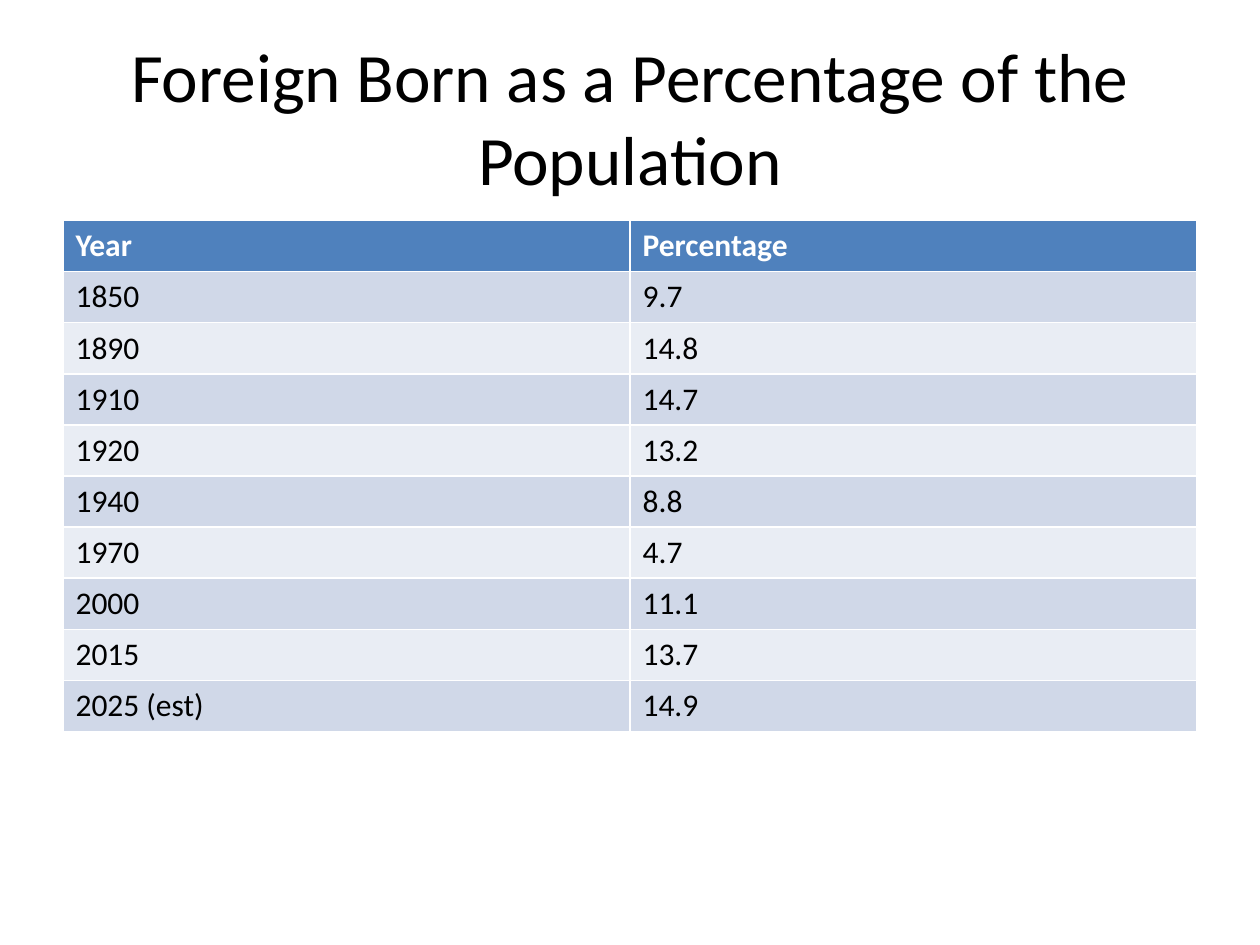
from pptx import Presentation
from pptx.dml.color import RGBColor
from pptx.enum.text import MSO_ANCHOR, MSO_AUTO_SIZE, PP_ALIGN
from pptx.util import Inches, Pt

MIDDLE = MSO_ANCHOR.MIDDLE
NO_FIT = MSO_AUTO_SIZE.NONE
CENTER = PP_ALIGN.CENTER

WIDTH, HEIGHT = Inches(10), Inches(7.5)
TITLE_BOX = (0.05, 0.04, 0.9, 1 / 6)
TABLE_BOX = (0.05, 7 / 30, 0.9, 0.54)
COLORS = {
    "header": "4F81BD",
    "odd": "D0D8E8",
    "even": "E9EDF4",
    "light": "FFFFFF",
    "dark": "000000",
}
TITLE_FONT = {"name": "Calibri", "size": Pt(39.6), "bold": False}
HEADER_FONT = {"name": "Calibri", "size": Pt(18), "bold": True}
BODY_FONT = {**HEADER_FONT, "bold": False}

TITLE = "Foreign Born as a Percentage of the Population"
ROWS = [
    ("Year", "Percentage"),
    ("1850", "9.7"),
    ("1890", "14.8"),
    ("1910", "14.7"),
    ("1920", "13.2"),
    ("1940", "8.8"),
    ("1970", "4.7"),
    ("2000", "11.1"),
    ("2015", "13.7"),
    ("2025 (est)", "14.9"),
]


def place(box):
    """Turn shares of the slide into left, top, width and height."""
    return [round(share * side) for share, side in zip(box, (WIDTH, HEIGHT) * 2)]


def set_all(target, values):
    """Set each named attribute on the target."""
    for name, value in values.items():
        setattr(target, name, value)


def write(para, text, font, color):
    """Add one formatted span to a paragraph."""
    span = para.add_run()
    span.text = text
    set_all(span.font, font)
    span.font.color.rgb = RGBColor.from_string(COLORS[color])


def add_title(page, box):
    """Fill the title placeholder inside the box."""
    title = page.shapes.title
    set_all(title, dict(zip(("left", "top", "width", "height"), place(box))))
    frame = title.text_frame
    set_all(frame, {"word_wrap": True, "auto_size": NO_FIT, "vertical_anchor": MIDDLE})
    para = frame.paragraphs[0]
    para.alignment = CENTER
    write(para, TITLE, TITLE_FONT, "dark")


def add_percentages(page, box):
    """Build the banded table of years and percentages inside the box."""
    table = page.shapes.add_table(len(ROWS), len(ROWS[0]), *place(box)).table
    for row, values in enumerate(ROWS):
        fill = ("odd" if row % 2 else "even") if row else "header"
        font, color = (BODY_FONT, "dark") if row else (HEADER_FONT, "light")
        for column, text in enumerate(values):
            cell = table.cell(row, column)
            cell.fill.solid()
            cell.fill.fore_color.rgb = RGBColor.from_string(COLORS[fill])
            write(cell.text_frame.paragraphs[0], text, font, color)


def main():
    """Create the deck and save it."""
    deck = Presentation()
    set_all(deck, {"slide_width": WIDTH, "slide_height": HEIGHT})
    page = deck.slides.add_slide(deck.slide_layouts.get_by_name("Title Only"))
    add_title(page, TITLE_BOX)
    add_percentages(page, TABLE_BOX)
    deck.save("out.pptx")


if __name__ == "__main__":
    main()
